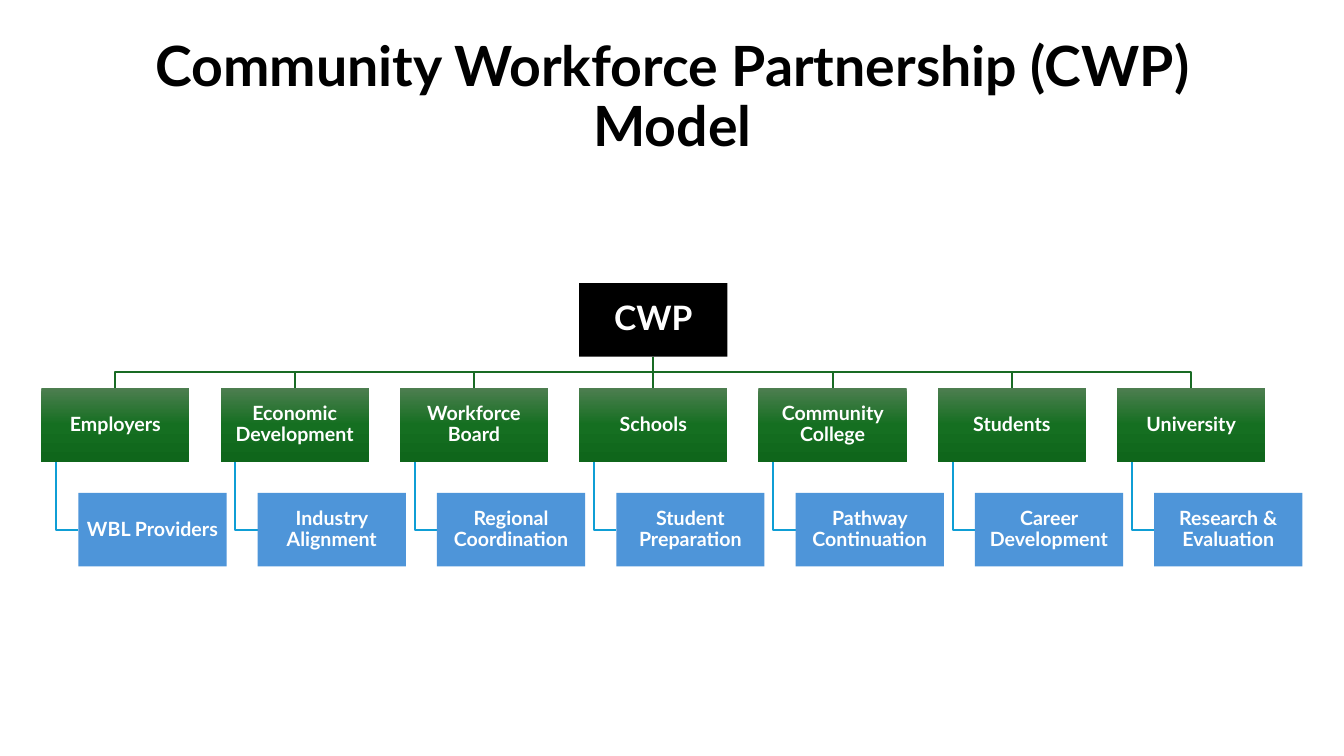
import copy

import pptx
import pptx.dml.color
import pptx.enum.shapes
import pptx.enum.text
import pptx.oxml.ns
import pptx.util

RGBColor = pptx.dml.color.RGBColor
BLACK = RGBColor(0x00, 0x00, 0x00)
WHITE = RGBColor(0xFF, 0xFF, 0xFF)
BLUE = RGBColor(0x4E, 0x95, 0xD9)
LINK_BLUE = RGBColor(0x0F, 0x9E, 0xD5)
LINK_GREEN = RGBColor(0x19, 0x6B, 0x24)
GREENS = [
    (0, RGBColor(0x4D, 0x7E, 0x50)),
    (0.5, RGBColor(0x15, 0x6F, 0x21)),
    (1, RGBColor(0x0F, 0x66, 0x1B)),
]

# Grid, in inches: seven columns and three rows of equal boxes
LEFT, TOP = 0.41, 2.81
COLUMN, ROW = 10.67 / 6, 1.04
BOX_WIDTH, BOX_HEIGHT = 1.47, 0.73
INDENT = BOX_WIDTH / 4  # shift of a role box against its partner
STEM = BOX_WIDTH / 10  # where a role link leaves its partner
ROOT_COLUMN = 3

PARTNERS = [
    ("Employers", "WBL Providers"),
    ("Economic Development", "Industry Alignment"),
    ("Workforce Board", "Regional Coordination"),
    ("Schools", "Student Preparation"),
    ("Community College", "Pathway Continuation"),
    ("Students", "Career Development"),
    ("University", "Research & Evaluation"),
]


class ChartSlide:
    font = "Lato"

    def __init__(self, presentation):
        self.slide = presentation.slides.add_slide(presentation.slide_layouts[6])

    def label(self, shape, text, size, color, margin):
        frame = shape.text_frame
        frame.word_wrap = True
        frame.vertical_anchor = pptx.enum.text.MSO_ANCHOR.MIDDLE
        frame.margin_left = frame.margin_right = pptx.util.Inches(margin)
        frame.margin_top = frame.margin_bottom = pptx.util.Inches(margin)
        paragraph = frame.paragraphs[0]
        paragraph.text = text
        paragraph.alignment = pptx.enum.text.PP_ALIGN.CENTER
        paragraph.line_spacing = 0.9
        paragraph.font.name = self.font
        paragraph.font.size = pptx.util.Pt(size)
        paragraph.font.bold = True
        paragraph.font.color.rgb = color

    def title(self, text, left, top, width, height):
        area = map(pptx.util.Inches, (left, top, width, height))
        self.label(self.slide.shapes.add_textbox(*area), text, 39.6, BLACK, 0.05)

    def box(self, text, column, row, fill, indent=0, size=14):
        area = (LEFT + column * COLUMN + indent, TOP + row * ROW, BOX_WIDTH, BOX_HEIGHT)
        shape = self.slide.shapes.add_shape(
            pptx.enum.shapes.MSO_SHAPE.RECTANGLE, *map(pptx.util.Inches, area))
        shape.shadow.inherit = False
        shape.line.fill.background()
        if isinstance(fill, list):
            self.gradient(shape, fill)
        else:
            shape.fill.solid()
            shape.fill.fore_color.rgb = fill
        self.label(shape, text, size, WHITE, 0.01)

    def gradient(self, shape, colors):
        shape.fill.gradient()
        shape.fill.gradient_angle = 270
        stops = next(shape.element.iter(pptx.oxml.ns.qn("a:gsLst")))
        stops.append(copy.deepcopy(stops[-1]))
        for stop, (position, color) in zip(shape.fill.gradient_stops, colors):
            stop.position = position
            stop.color.rgb = color

    def link(self, points, color):
        start, *others = [tuple(map(pptx.util.Inches, point)) for point in points]
        builder = self.slide.shapes.build_freeform(*start)
        builder.add_line_segments(others, close=False)
        shape = builder.convert_to_shape()
        shape.shadow.inherit = False
        shape.fill.background()
        shape.line.color.rgb = color
        shape.line.width = pptx.util.Pt(1.5)

    def root_link(self, column):
        root, partner = (LEFT + c * COLUMN + BOX_WIDTH / 2 for c in (ROOT_COLUMN, column))
        top, bottom = TOP + BOX_HEIGHT, TOP + ROW
        middle = (top + bottom) / 2
        points = [(root, top), (root, middle), (partner, middle), (partner, bottom)]
        if column == ROOT_COLUMN:
            points = [points[0], points[-1]]
        self.link(points, LINK_GREEN)

    def role_link(self, column):
        left = LEFT + column * COLUMN
        top, middle = TOP + ROW + BOX_HEIGHT, TOP + 2 * ROW + BOX_HEIGHT / 2
        self.link([(left + STEM, top), (left + STEM, middle), (left + INDENT, middle)],
                  LINK_BLUE)


def main():
    presentation = pptx.Presentation()
    presentation.slide_width = pptx.util.Inches(13.33)
    presentation.slide_height = pptx.util.Inches(7.5)
    chart = ChartSlide(presentation)

    chart.title("Community Workforce Partnership (CWP) Model", 0.92, 0.4, 11.5, 1.15)

    # Links lie behind the boxes
    for column in range(len(PARTNERS)):
        chart.role_link(column)
        chart.root_link(column)

    # Root, partners and their roles
    chart.box("CWP", ROOT_COLUMN, 0, BLACK, size=24)
    for column, (partner, role) in enumerate(PARTNERS):
        chart.box(partner, column, 1, GREENS)
        chart.box(role, column, 2, BLUE, indent=INDENT)

    presentation.save("out.pptx")


if __name__ == "__main__":
    main()
